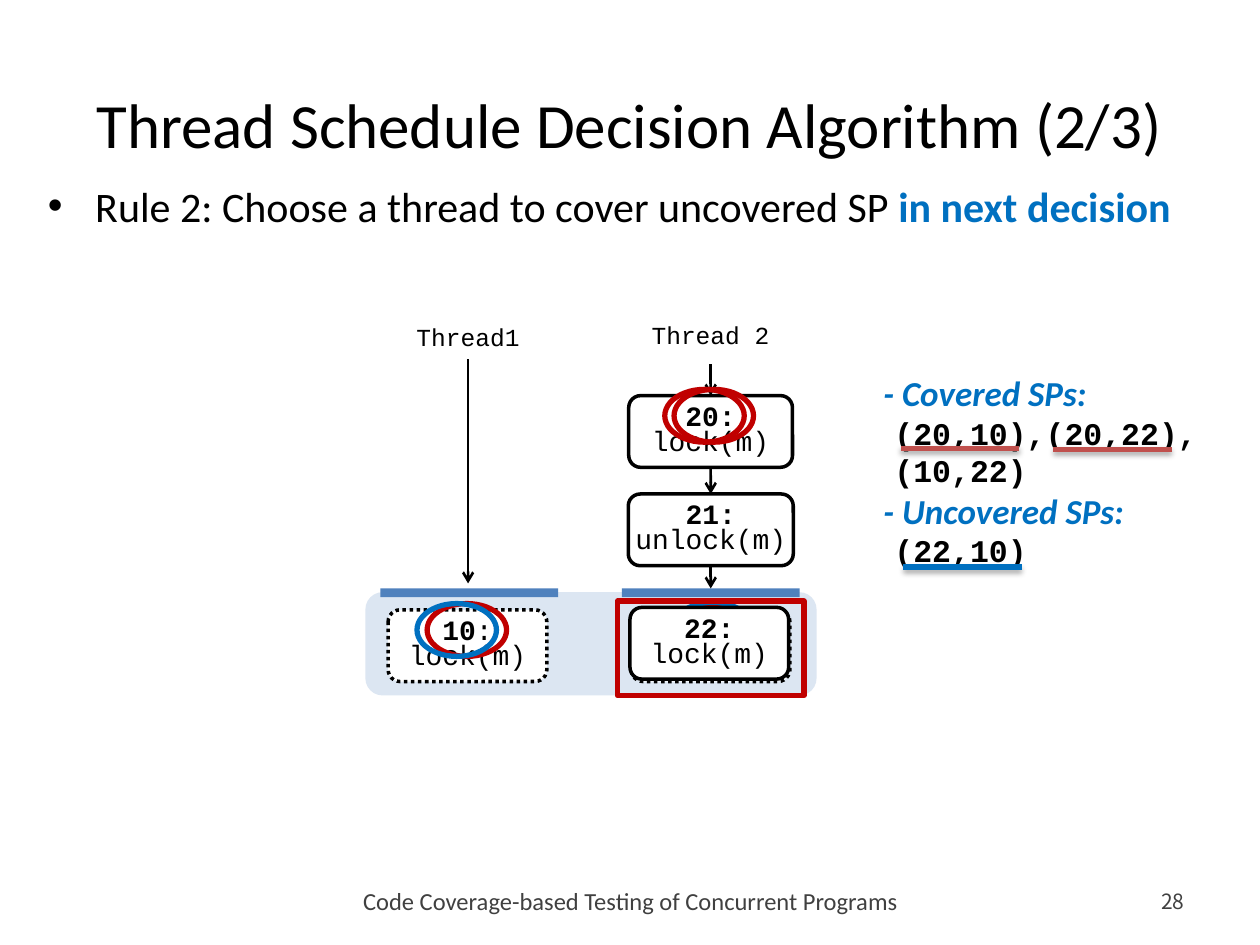
from collections import namedtuple

from pptx import Presentation
from pptx.dml.color import RGBColor
from pptx.enum.dml import MSO_LINE_DASH_STYLE as Dash
from pptx.enum.shapes import MSO_CONNECTOR as Connector, MSO_SHAPE as Shape
from pptx.enum.text import MSO_ANCHOR as Anchor, MSO_AUTO_SIZE as AutoSize, PP_ALIGN as Align
from pptx.oxml import parse_xml
from pptx.oxml.ns import nsdecls
from pptx.util import Pt

BLACK = RGBColor(0x00, 0x00, 0x00)
WHITE = RGBColor(0xFF, 0xFF, 0xFF)
GREY = RGBColor(0x40, 0x40, 0x40)
BLUE = RGBColor(0x00, 0x70, 0xC0)
BAR_BLUE = RGBColor(0x4F, 0x81, 0xBD)
PALE_BLUE = RGBColor(0xDC, 0xE6, 0xF2)
RED = RGBColor(0xC0, 0x00, 0x00)
SOFT_RED = RGBColor(0xC0, 0x50, 0x4D)

SANS, MONO, NUMBER_FONT = "Calibri", "Courier New", "Noto Sans CJK KR"
TOP, BOTTOM = 0, 2
SHADOW = (
    '<a:outerShdw blurRad="39370" dist="22860" dir="5400000" rotWithShape="0">'
    '<a:srgbClr val="000000"><a:alpha val="35000"/></a:srgbClr></a:outerShdw>'
)

Box = namedtuple("Box", "left top width height")


def add_run(paragraph, text, size, font=SANS, color=BLACK, bold=False, italic=False):
    run = paragraph.add_run()
    run.text = text
    run.font.size = Pt(size)
    run.font.name = font
    run.font.color.rgb = color
    run.font.bold = bold
    run.font.italic = italic


def place(shape, box):
    shape.left, shape.top, shape.width, shape.height = map(Pt, box)


def add_text_box(slide, box, anchor=Anchor.TOP):
    frame = slide.shapes.add_textbox(*map(Pt, box)).text_frame
    frame.word_wrap = True
    frame.vertical_anchor = anchor
    return frame


def add_label(slide, box, text, size, font, color=BLACK, align=Align.CENTER, anchor=Anchor.TOP):
    paragraph = add_text_box(slide, box, anchor).paragraphs[0]
    paragraph.alignment = align
    add_run(paragraph, text, size, font, color)


def add_shape(slide, kind, box, fill=None, line=None, width=2):
    shape = slide.shapes.add_shape(kind, *map(Pt, box))
    shape.shadow.inherit = False
    if fill is None:
        shape.fill.background()
    else:
        shape.fill.solid()
        shape.fill.fore_color.rgb = fill
    if line is None:
        shape.line.fill.background()
    else:
        shape.line.color.rgb = line
        shape.line.width = Pt(width)
    return shape


def add_line(slide, start, end, color, width, effect=""):
    line = slide.shapes.add_connector(Connector.STRAIGHT, *map(Pt, start + end))
    line.line.color.rgb = color
    line.line.width = Pt(width)
    line._element.spPr.append(
        parse_xml(f"<a:effectLst {nsdecls('a')}>{effect}</a:effectLst>"))
    return line


def add_arrow(slide, start, end):
    arrow = add_line(slide, start, end, BLACK, 1.5)
    arrow.line._get_or_add_ln().append(
        parse_xml(f'<a:tailEnd {nsdecls("a")} type="arrow"/>'))
    return arrow


def add_statement(slide, box, number, call, colon_bold=True, dotted=False):
    """Add a program statement: its line number above the call it makes."""
    shape = add_shape(slide, Shape.ROUNDED_RECTANGLE, box, WHITE, BLACK)
    if dotted:
        shape.line.dash_style = Dash.ROUND_DOT
    frame = shape.text_frame
    frame.margin_left = frame.margin_right = frame.margin_top = frame.margin_bottom = 0
    frame.word_wrap = True
    frame.vertical_anchor = Anchor.MIDDLE
    heading, body = frame.paragraphs[0], frame.add_paragraph()
    for paragraph in (heading, body):
        paragraph.alignment = Align.CENTER
        paragraph.line_spacing = 0.75
    add_run(heading, number, 16, MONO, bold=True)
    add_run(heading, ":", 16, MONO, bold=colon_bold)
    add_run(body, call, 16, MONO)
    return shape


def add_heading(slide, box):
    title, body = slide.placeholders
    place(title, Box(box.left, box.top, box.width, 54.7))
    title.text_frame.vertical_anchor = Anchor.MIDDLE
    title.text_frame.auto_size = AutoSize.NONE
    paragraph = title.text_frame.paragraphs[0]
    paragraph.alignment = Align.CENTER
    add_run(paragraph, "Thread Schedule Decision Algorithm (2/3)", 36)

    place(body, Box(box.left + 20.2, box.top + 56.2, 680.4, 36))
    body.text_frame.auto_size = AutoSize.NONE
    paragraph = body.text_frame.paragraphs[0]
    paragraph.space_before = Pt(0)
    add_run(paragraph, "Rule 2: Choose a thread to cover uncovered SP ", 24)
    add_run(paragraph, "in next decision", 24, color=BLUE, bold=True)


def add_footer(slide, box):
    add_label(slide, Box(box.left, box.top, 488.9, box.height),
              "Code Coverage-based Testing of Concurrent Programs", 14, SANS, GREY,
              anchor=Anchor.MIDDLE)
    add_label(slide, Box(box.left + box.width - 40.3, box.top, 40.3, box.height),
              "28", 12, NUMBER_FONT, GREY, Align.RIGHT, Anchor.MIDDLE)


def add_thread_diagram(slide, box):
    def at(left, top, width, height):
        return Box(box.left + left, box.top + top, width, height)

    def point(x, y):
        return box.left + x, box.top + y

    thread1, thread2 = 58.7, 197.3
    add_shape(slide, Shape.ROUNDED_RECTANGLE, at(0, 159.1, box.width, 59), PALE_BLUE)
    add_arrow(slide, point(thread1, 25.9), point(thread1, 154.1))
    entry = add_arrow(slide, point(thread2, 28.8), point(thread2, 46.8))
    add_label(slide, at(thread2 - 47, 0, 94, 24.5), "Thread 2", 14, MONO)
    add_label(slide, at(thread1 - 45, 1.4, 90, 24.5), "Thread1", 14, MONO)

    add_statement(slide, at(13, 169.2, 90.7, 41), "10", "lock(m)", False, True)
    first = add_statement(slide, at(150.5, 46.8, 93.6, 41), "20", "lock(m)")
    add_statement(slide, at(151.9, 169.2, 90.7, 41), "22", "lock(m)", dotted=True)
    second = add_statement(slide, at(150.2, 103, 94.3, 41), "21", "unlock(m)")
    entry.end_connect(first, TOP)

    barrier, _ = [add_shape(slide, Shape.RECTANGLE, at(left, 157, 101.5, 5), BAR_BLUE)
                  for left in (146.6, 8.6)]
    for upper, lower in ((first, second), (second, barrier)):
        arrow = add_arrow(slide, point(thread2, 88), point(thread2, 103))
        arrow.begin_connect(upper, BOTTOM)
        arrow.end_connect(lower, TOP)

    for left, top, color in ((176.4, 43.2, RED), (176.4, 165.6, RED), (35.3, 165.6, RED),
                             (171.1, 43.2, RED), (29.5, 165.6, BLUE), (175.7, 164.9, BLUE)):
        add_shape(slide, Shape.OVAL, at(left, top, 45.4, 30.2), line=color, width=3)
    add_shape(slide, Shape.RECTANGLE, at(144, 164.2, 106.6, 54), line=RED, width=3)
    add_statement(slide, at(151.2, 167.8, 90.7, 41), "22", "lock(m)")


def add_pair_list(slide, box):
    """List the covered and uncovered statement pairs, some underlined."""
    frame = add_text_box(slide, box)
    groups = ((" - Covered SPs:", (" (20,10),(20,22),", " (10,22)")),
              (" - Uncovered SPs:", (" (22,10)",)))
    paragraph = frame.paragraphs[0]
    for heading, pairs in groups:
        if paragraph.runs:
            paragraph = frame.add_paragraph()
        add_run(paragraph, heading, 20, SANS, BLUE, True, True)
        for pair in pairs:
            add_run(frame.add_paragraph(), pair, 18, MONO, bold=True)
    for left, top, color in ((108.7, 48.2, SOFT_RED), (21.6, 47.5, SOFT_RED), (23, 115.2, BLUE)):
        x, y = box.left + left, box.top + top
        add_line(slide, (x, y), (x + 67.7, y), color, 3, SHADOW)


def main():
    presentation = Presentation()
    presentation.slide_width, presentation.slide_height = Pt(720), Pt(540)
    slide = presentation.slides.add_slide(presentation.slide_layouts[1])
    add_footer(slide, Box(115.9, 500.4, 568.1, 28.8))
    add_heading(slide, Box(0, 43.2, 719.3, 92.2))
    add_thread_diagram(slide, Box(208.8, 179.3, 257.8, 218.1))
    add_pair_list(slide, Box(493.2, 208.8, 229.7, 121))
    presentation.save("out.pptx")


if __name__ == "__main__":
    main()
